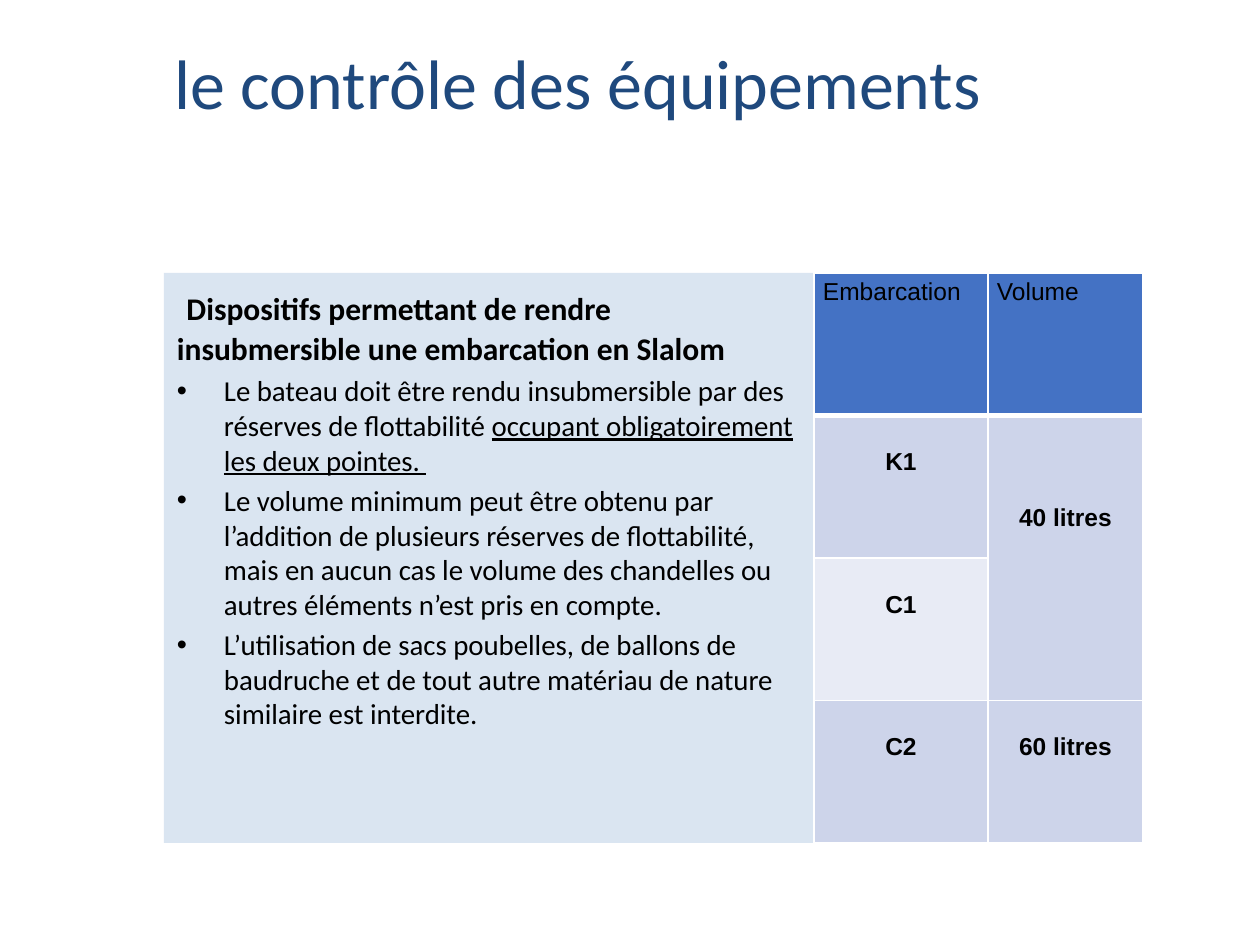
from lxml.etree import SubElement as Sub
from pptx import Presentation
from pptx.dml.color import RGBColor as Rgb
from pptx.enum.shapes import MSO_SHAPE as Kind
from pptx.enum.text import MSO_ANCHOR as Anchor, PP_ALIGN as Align
from pptx.oxml.ns import qn
from pptx.util import Pt

PX = 914400 / 126
THEME = {
    "navy": "1F497D", "glow": "A9C3E3", "pale": "DAE5F1", "ink": "000000",
    "head": "4472C4", "band": "CDD4EA", "light": "E8EBF5", "rule": "FFFFFF",
    "title": 40, "gap": 33, "lead": 24, "sub": 18, "body": 16.5, "cell": 14,
    "sans": "Calibri", "grid": "Arial",
}
BULLETS = [
    [("Le bateau doit être rendu insubmersible par des réserves de flottabilité ", False),
     ("occupant obligatoirement les deux pointes. ", True)],
    [("Le volume minimum peut être obtenu par l’addition de plusieurs réserves de "
      "flottabilité, mais en aucun cas le volume des chandelles ou autres éléments "
      "n’est pris en compte.", False)],
    [("L’utilisation de sacs poubelles, de ballons de baudruche et de tout autre "
      "matériau de nature similaire est interdite.", False)],
]


def px(n):
    return round(n * PX)


def put(obj, vals):
    for name, val in vals.items():
        setattr(obj, name, val)


def pad(side, top):
    return {"margin_left": px(side), "margin_right": px(side),
            "margin_top": px(top), "margin_bottom": px(6)}


def paint(fill, tone):
    fill.solid()
    fill.fore_color.rgb = Rgb.from_string(THEME[tone])


def write(para, text, size, tone="ink", face="sans", **style):
    run = para.add_run()
    run.text = text
    put(run.font, {"size": Pt(THEME[size]), "name": THEME[face], **style})
    run.font.color.rgb = Rgb.from_string(THEME[tone])
    return run


def shade(run):
    fx = Sub(run.font._element, qn("a:effectLst"))
    run.font._element.find(qn("a:solidFill")).addnext(fx)
    cast = Sub(fx, qn("a:outerShdw"), blurRad="38100", dist="38100",
               dir="5400000", algn="t", rotWithShape="0")
    Sub(cast, qn("a:srgbClr"), val=THEME["glow"])


def dot(para):
    props = para._p.get_or_add_pPr()
    props.set("marL", str(px(47)))
    props.set("indent", str(-px(47)))
    Sub(Sub(props, qn("a:buClr")), qn("a:srgbClr"), val=THEME["ink"])
    Sub(props, qn("a:buFont"), typeface="Arial")
    Sub(props, qn("a:buChar"), char="•")


def title(slide, x, y, w, h):
    frame = slide.shapes.add_textbox(px(x), px(y), px(w), px(h)).text_frame
    put(frame, {"word_wrap": True, **pad(13, 6)})
    para = frame.paragraphs[0]
    para.alignment = Align.CENTER
    write(para, " ", "gap")
    shade(write(para, "le contrôle des équipements", "title", "navy"))


def panel(slide, x, y, w, h):
    box = slide.shapes.add_shape(Kind.RECTANGLE, px(x), px(y), px(w), px(h))
    box.shadow.inherit = False
    box.line.fill.background()
    paint(box.fill, "pale")
    frame = box.text_frame
    put(frame, {"word_wrap": True, "vertical_anchor": Anchor.TOP, **pad(13, 6)})
    para = frame.paragraphs[0]
    para.alignment = Align.LEFT
    write(para, " ", "lead", bold=True)
    write(para, "Dispositifs permettant de rendre insubmersible une embarcation en Slalom",
          "sub", bold=True)
    for parts in BULLETS:
        para = frame.add_paragraph()
        dot(para)
        put(para, {"alignment": Align.LEFT, "space_before": Pt(3.3)})
        for text, line in parts:
            write(para, text, "body", underline=line)


def edge(cell, sides):
    props = cell._tc.get_or_add_tcPr()
    for side, wide in sides.items():
        line = Sub(props, qn("a:ln" + side), w=str(Pt(wide)))
        Sub(Sub(line, qn("a:solidFill")), qn("a:srgbClr"), val=THEME["rule"])


def label(cell, text, skip=0, **style):
    put(cell, pad(9, 5 + 28 * skip))
    para = cell.text_frame.paragraphs[0]
    para.alignment = Align.CENTER if skip else Align.LEFT
    write(para, text, "cell", face="grid", **style)


def volumes(slide, x, y, w, h):
    wides = (174, w - 174)
    tones = ("head", "band", "light", "band")
    grid = slide.shapes.add_table(4, 2, px(x), px(y), px(w), px(h)).table
    put(grid, {"first_row": False, "horz_banding": False})
    for col, wide in zip(grid.columns, wides):
        col.width = px(wide)
    for r, tone in enumerate(tones):
        grid.rows[r].height = px(h / 4)
        for c in range(2):
            cell = grid.cell(r, c)
            edge(cell, {"L": 1, "R": 1, "T": 3 if r == 1 else 1, "B": 3 if r == 0 else 1})
            paint(cell.fill, "band" if c and r else tone)
    grid.cell(1, 1).merge(grid.cell(2, 1))
    for c, text in enumerate(("Embarcation", "Volume")):
        label(grid.cell(0, c), text)
    for r, c, text, skip in ((1, 0, "K1", 1), (2, 0, "C1", 1), (3, 0, "C2", 1),
                             (1, 1, "40 litres", 3), (3, 1, "60 litres", 1)):
        label(grid.cell(r, c), text, skip, bold=True)


def main():
    deck = Presentation()
    put(deck, {"slide_width": px(1260), "slide_height": px(945)})
    slide = deck.slides.add_slide(deck.slide_layouts[6])
    title(slide, 115, 34, 912, 209)
    panel(slide, 164, 273, 650, 570)
    volumes(slide, 814, 273, 329, 570)
    deck.save("out.pptx")


if __name__ == "__main__":
    main()
